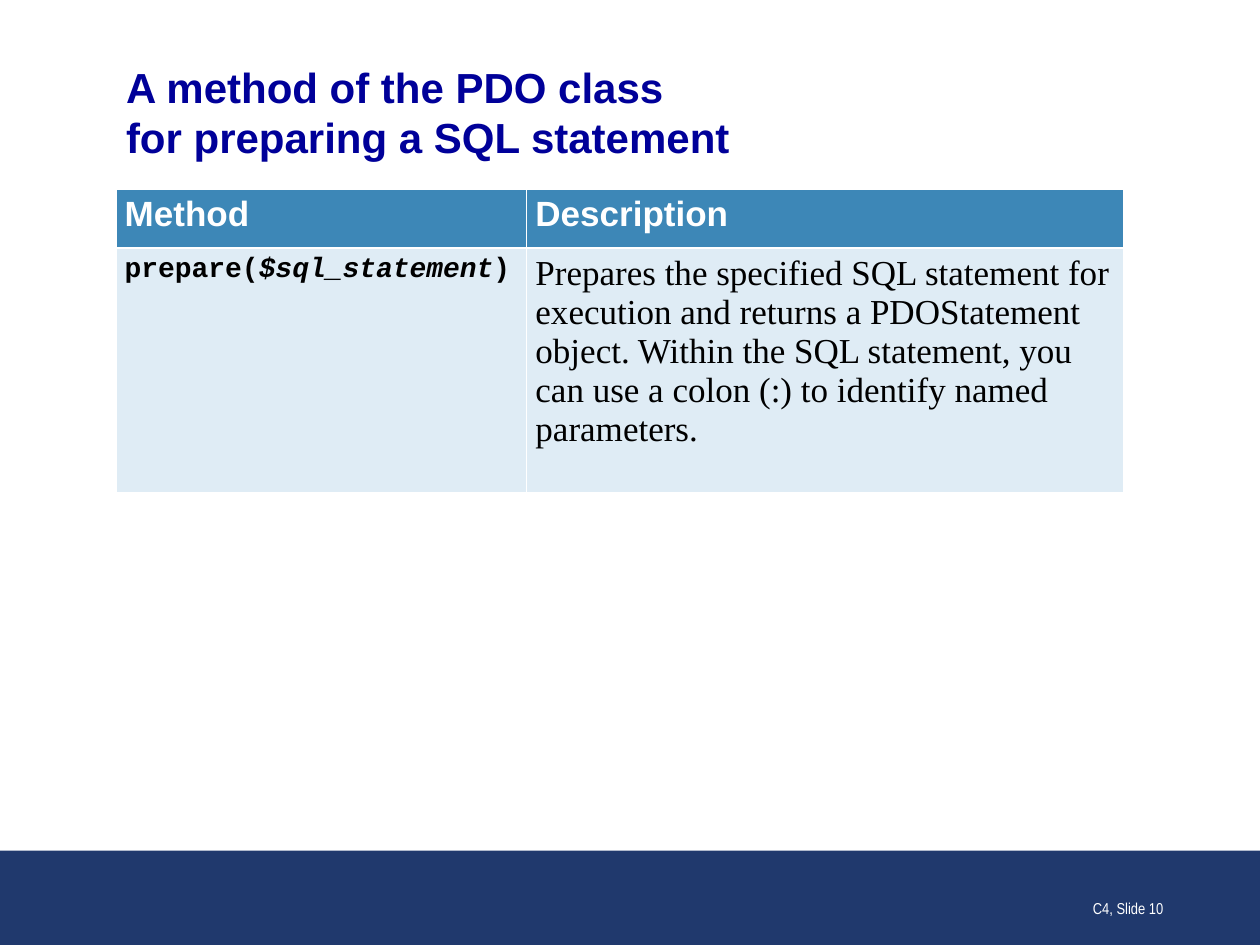
from dataclasses import dataclass

import pptx
import pptx.dml.color
import pptx.enum.shapes
import pptx.enum.text
import pptx.util

Inches = pptx.util.Inches
Anchor = pptx.enum.text.MSO_ANCHOR


@dataclass(frozen=True)
class Theme:
    heading_color: str = "000099"
    header_fill: str = "3D87B7"
    body_fill: str = "DFECF5"
    footer_fill: str = "20396D"
    light: str = "FFFFFF"
    dark: str = "000000"
    title_size: int = 24
    table_size: int = 20
    code_size: int = 16
    footer_size: int = 9


THEME = Theme()
WIDTH, HEIGHT = 10, 7.5
TITLE_LINES = ["A method of the PDO class", "for preparing a SQL statement"]
HEADER = dict(font="Arial", size=THEME.table_size, color=THEME.light, bold=True)
CODE = dict(font="Courier New", size=THEME.code_size, color=THEME.dark, bold=True)
PROSE = dict(font="Times New Roman", size=THEME.table_size, color=THEME.dark)
ROWS = [
    (0.47, THEME.header_fill, [
        [("Method", HEADER)],
        [("Description", HEADER)],
    ]),
    (1.94, THEME.body_fill, [
        [("prepare(", CODE), ("$sql_statement", dict(CODE, italic=True)), (")", CODE)],
        [("Prepares the specified SQL statement for execution and returns a "
          "PDOStatement object. Within the SQL statement, you can use a colon (:) "
          "to identify named parameters.", PROSE)],
    ]),
]
COLUMNS = [3.26, 4.74]
FOOTER = "C4, Slide 10"


def box(left, top, width, height):
    return [Inches(length) for length in (left, top, width, height)]


def paint(fill, color):
    fill.solid()
    fill.fore_color.rgb = pptx.dml.color.RGBColor.from_string(color)


def add_run(paragraph, text, font, size, color, bold=False, italic=False):
    run = paragraph.add_run()
    run.text = text
    run.font.name = font
    run.font.size = pptx.util.Pt(size)
    run.font.bold = bold
    run.font.italic = italic
    run.font.color.rgb = pptx.dml.color.RGBColor.from_string(color)


def set_margins(holder, side, end):
    holder.margin_left = holder.margin_right = Inches(side)
    holder.margin_top = holder.margin_bottom = Inches(end)


def add_heading(slide):
    heading = slide.shapes.title
    heading.left, heading.top, heading.width, heading.height = box(1, 0.48, 0.8 * WIDTH, 0.81)
    frame = heading.text_frame
    frame.word_wrap = True
    frame.vertical_anchor = Anchor.MIDDLE
    set_margins(frame, 0, 0)
    paragraph = frame.paragraphs[0]
    paragraph.alignment = pptx.enum.text.PP_ALIGN.LEFT
    for index, line in enumerate(TITLE_LINES):
        if index:
            paragraph.add_line_break()
        add_run(paragraph, line, "Arial", THEME.title_size, THEME.heading_color, bold=True)


def add_method_table(slide):
    total = sum(height for height, _, _ in ROWS)
    table = slide.shapes.add_table(
        len(ROWS), len(COLUMNS), *box(0.92, 1.5, sum(COLUMNS), total)).table
    for column, width in zip(table.columns, COLUMNS):
        column.width = Inches(width)
    for row, (height, fill, contents) in zip(table.rows, ROWS):
        row.height = Inches(height)
        for cell, runs in zip(row.cells, contents):
            paint(cell.fill, fill)
            set_margins(cell, 0.07, 0.05)
            for text, style in runs:
                add_run(cell.text_frame.paragraphs[0], text, **style)


def add_footer(slide):
    band_height = HEIGHT / 10
    band = slide.shapes.add_shape(
        pptx.enum.shapes.MSO_SHAPE.RECTANGLE,
        *box(0, HEIGHT - band_height, WIDTH, band_height))
    band.shadow.inherit = False
    paint(band.fill, THEME.footer_fill)
    band.line.fill.background()
    frame = slide.shapes.add_textbox(*box(7.25, 6.83, 2.08, 0.5)).text_frame
    frame.word_wrap = True
    frame.vertical_anchor = Anchor.BOTTOM
    paragraph = frame.paragraphs[0]
    paragraph.alignment = pptx.enum.text.PP_ALIGN.RIGHT
    add_run(paragraph, FOOTER, "Arial Narrow", THEME.footer_size, THEME.light)


def main():
    deck = pptx.Presentation()
    deck.slide_width, deck.slide_height = Inches(WIDTH), Inches(HEIGHT)
    slide = deck.slides.add_slide(deck.slide_layouts.get_by_name("Title Only"))
    add_heading(slide)
    add_method_table(slide)
    add_footer(slide)
    deck.save("out.pptx")


if __name__ == "__main__":
    main()
